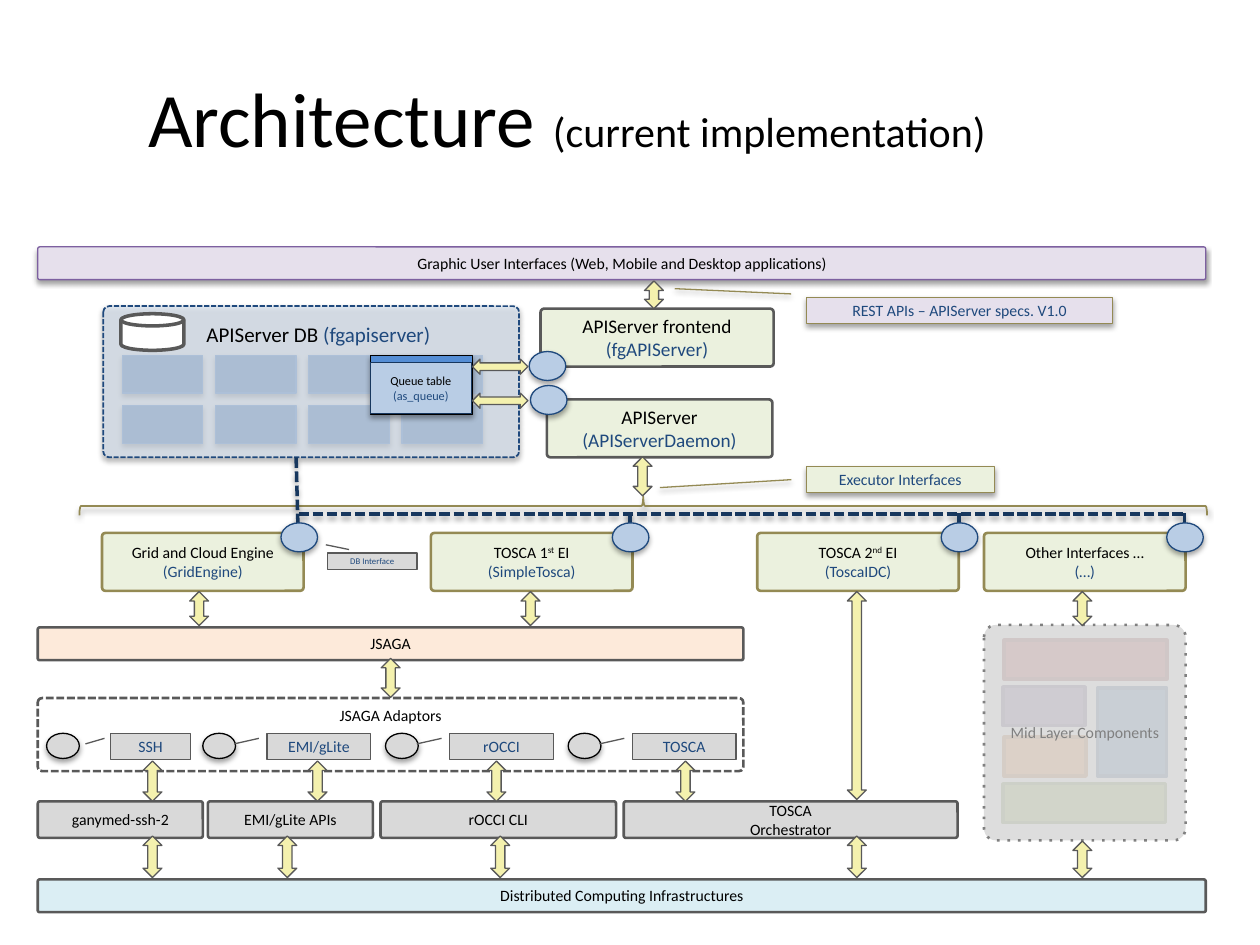
from lxml import etree
from pptx import Presentation
from pptx import util as u
from pptx.dml.color import RGBColor
from pptx.enum import shapes, text
from pptx.oxml.ns import qn

KIND = shapes.MSO_SHAPE
NAVY, INK, GREY, OLIVE = "1F497D", "000000", "595959", "948A54"

# Theme: text, then fill, line, width and extras for every kind of part
THEME = {
    "font": "Calibri",
    "size": {"title": 44, "subtitle": 24, "database": 12, "server": 11, "body": 9, "queue": 7, "tiny": 5},
    "shadow": {"opacity": 36, "blur": 3.1, "distance": 1.7},
    "look": {
        "tile": dict(fill="4F81BD", line="558ED5", width=0.75, shadow=True),
        "database": dict(fill="DCE6F2", line=NAVY, width=1, dash="sysDash", alpha=70, shadow=True),
        "disk": dict(fill="FFFFFF", line=GREY, width=2),
        "adaptors": dict(fill="FFFFFF", line=GREY, width=1.5, dash="sysDash"),
        "engine": dict(fill="EBF1DE", line=OLIVE, width=1.5),
        "server": dict(fill="EBF1DE", line=GREY, width=1.5),
        "saga": dict(fill="FDEADA", line=GREY, width=1.5),
        "infra": dict(fill="DBEEF4", line=GREY, width=1.5),
        "gui": dict(fill="E6E0EC", line="7D60A0", width=0.75, shadow=True),
        "client": dict(fill="D9D9D9", line=GREY, width=1.5),
        "middle": dict(fill="D9D9D9", line="808080", width=1.5, dash="dot", alpha=89),
        "label": dict(fill="D9D9D9", line=GREY, width=0.75),
        "dot": dict(fill="D9D9D9", line=INK, width=0.75, shadow=True),
        "executor": dict(fill="EBF1DE", line=OLIVE, width=0.75, shadow=True),
        "rest": dict(fill="E6E0EC", line=OLIVE, width=0.75, shadow=True),
        "queue_head": dict(fill="558ED5", line=INK, width=0.75, shadow=True),
        "queue": dict(fill="B9CDE5", line="17375E", width=0.75),
        "port": dict(fill="B9CDE5", line=NAVY, width=0.75, shadow=True),
        "arrow": dict(fill="F4F1AE", line=GREY, width=0.75),
        "brace": dict(line=OLIVE, width=1, shadow=True),
        "bus": dict(line="17375E", width=2, dash="sysDash", shadow=True),
    },
}
SIZE = THEME["size"]

# Content: places are left, top, width, height in inches
TITLE = [("Architecture ", "title"), ("(current implementation)", "subtitle")]
MIDDLE_PARTS = [  # place, fill, line
    ((7.97, 5.08, 1.29, 0.31), "C0504D", "8E3B39"),
    ((8.71, 5.46, 0.55, 0.7), "4F81BD", "3A5F8C"),
    ((7.96, 5.45, 0.65, 0.31), "8064A2", "5F4A78"),
    ((7.97, 5.85, 0.65, 0.31), "F79646", "B76F34"),
    ((7.96, 6.22, 1.29, 0.31), "9BBB59", "738A42"),
]
BARS = [  # place, look, text
    ((0.3, 5.54, 5.6, 0.58), "adaptors", "JSAGA Adaptors"),
    ((0.3, 4.98, 5.6, 0.26), "saga", "JSAGA"),
    ((0.3, 6.98, 9.27, 0.26), "infra", "Distributed Computing Infrastructures"),
    ((0.3, 1.96, 9.27, 0.26), "gui", "Graphic User Interfaces (Web, Mobile and Desktop applications)"),
]
ENGINES = [  # left, name (^ around raised text), implementation
    (0.81, "Grid and Cloud Engine", "(GridEngine)"),
    (3.42, "TOSCA 1^st^ EI", "(SimpleTosca)"),
    (6.01, "TOSCA 2^nd^ EI", "(ToscaIDC)"),
    (7.81, "Other Interfaces …", "(…)"),
]
SERVERS = [
    ((4.34, 3.17, 1.79, 0.46), "APIServer", "(APIServerDaemon)"),
    ((4.29, 2.45, 1.85, 0.46), "APIServer frontend", "(fgAPIServer)"),
]
ADAPTORS = [(0.88, 0.63, "SSH"), (2.12, 0.82, "EMI/gLite"), (3.57, 0.82, "rOCCI"), (5.02, 0.82, "TOSCA")]
CLIENTS = [  # left, width, lines
    (0.3, 1.31, ["ganymed-ssh-2"]), (1.65, 1.31, ["EMI/gLite APIs"]),
    (3.02, 1.87, ["rOCCI CLI"]), (4.95, 2.65, ["TOSCA", "Orchestrator"]),
]
CALLOUTS = [  # place, look, text, size, leader line
    ((2.6, 4.39, 0.71, 0.13), "label", "DB Interface", "tiny", (-0.22, 0.24, -0.51, -0.02)),
    ((6.4, 3.7, 1.49, 0.21), "executor", "Executor Interfaces", "body", (0.51, -0.08, 0.81, -0.78)),
    ((6.4, 2.36, 2.43, 0.21), "rest", "REST APIs – APIServer specs. V1.0", "body", (-0.13, -0.05, -0.33, -0.43)),
]
ARROWS = [  # centre height, length, centres across
    (2.34, 0.22, [5.19]),
    (3.78, 0.31, [5.1]),
    (4.83, 0.27, [1.58, 4.21, 8.59]),
    (5.38, 0.31, [3.1]),
    (5.52, 1.65, [6.8]),
    (6.2, 0.32, [1.21, 2.52, 3.94, 5.44]),
    (6.8, 0.33, [1.21, 2.28, 3.97, 6.8]),
    (6.82, 0.29, [8.59]),
]
ENGINE_PORTS = [2.37, 5, 7.61, 9.4]
SERVER_PORTS = [(4.34, 2.9), (4.35, 3.17)]
PORT_Y, BUS_Y = 4.26, 4.08


def child(parent, tag, **attributes):
    return etree.SubElement(parent, qn(tag), {key: str(value) for key, value in attributes.items()})


def dress(item, look):
    """Give a shape or connector its fill, outline and shadow."""
    props = item._element.spPr
    if look.get("fill"):
        item.fill.solid()
        item.fill.fore_color.rgb = RGBColor.from_string(look["fill"])
        if "alpha" in look:
            child(props.find(qn("a:solidFill"))[0], "a:alpha", val=look["alpha"] * 1000)
    elif hasattr(item, "fill"):
        item.fill.background()
    item.line.color.rgb = RGBColor.from_string(look["line"])
    item.line.width = u.Pt(look["width"])
    if "dash" in look:
        child(props.find(qn("a:ln")), "a:prstDash", val=look["dash"])
    effects = child(props, "a:effectLst")
    if look.get("shadow"):
        cast = THEME["shadow"]
        outer = child(effects, "a:outerShdw", blurRad=u.Pt(cast["blur"]), dist=u.Pt(cast["distance"]),
                      dir=5400000, rotWithShape=0)
        child(child(outer, "a:srgbClr", val="000000"), "a:alpha", val=cast["opacity"] * 1000)


def add_span(para, words, size, color, raised=False):
    span = para.add_run()
    span.text = words
    formats = {"name": THEME["font"], "size": u.Pt(SIZE[size])}
    for name, value in formats.items():
        setattr(span.font, name, value)
    span.font.color.rgb = RGBColor.from_string(color)
    if raised:
        span._r.get_or_add_rPr().set("baseline", "30000")


def write(box, lines, size="body", colors=(INK, NAVY), anchor=text.MSO_ANCHOR.MIDDLE):
    frame = box.text_frame
    frame.word_wrap, frame.vertical_anchor = True, anchor
    for index, line in enumerate(lines):
        para = frame.add_paragraph() if index else frame.paragraphs[0]
        para.alignment = text.PP_ALIGN.CENTER
        for part, words in enumerate(line.split("^")):
            add_span(para, words, size, colors[index], raised=part % 2 == 1)


def add_part(page, place, look, kind=KIND.RECTANGLE, adjust=()):
    box = page.shapes.add_shape(kind, *map(u.Inches, place))
    for index, value in enumerate(adjust):
        box.adjustments[index] = value
    dress(box, THEME["look"][look] if isinstance(look, str) else look)
    return box


def add_round(page, place, look, corner=0.06):
    return add_part(page, place, look, KIND.ROUNDED_RECTANGLE, [corner])


def add_arrow(page, x, y, length, thick=0.15, turn=0):
    place = (x - length / 2, y - thick / 2, length, thick)
    add_part(page, place, "arrow", KIND.LEFT_RIGHT_ARROW).rotation = turn


def add_bus(page, *ends):
    line = page.shapes.add_connector(shapes.MSO_CONNECTOR.STRAIGHT, *map(u.Inches, ends))
    dress(line, THEME["look"]["bus"])


def main():
    deck = Presentation()
    deck.slide_width, deck.slide_height = u.Inches(10), u.Inches(7.5)
    page = deck.slides.add_slide(deck.slide_layouts[5])

    # Title
    title = page.shapes.title
    for name, value in {"left": 0, "top": 0.3, "width": 9, "height": 1.25}.items():
        setattr(title, name, u.Inches(value))
    title.text_frame.vertical_anchor = text.MSO_ANCHOR.MIDDLE
    para = title.text_frame.paragraphs[0]
    para.alignment = text.PP_ALIGN.CENTER
    for words, size in TITLE:
        add_span(para, words, size, INK)

    # Database tables and middle layer under their translucent panels
    for column in range(4):
        for row in range(2):
            add_part(page, (0.97 + 0.74 * column, 2.82 + 0.4 * row, 0.64, 0.3), "tile")
    for place, fill, line in MIDDLE_PARTS:
        add_part(page, place, dict(fill=fill, line=line, width=2))
    add_round(page, (0.82, 2.43, 3.3, 1.2), "database", 0.04)
    write(add_round(page, (7.81, 4.96, 1.6, 1.71), "middle"), ["Mid Layer Components"], colors=["808080"])
    add_part(page, (0.96, 2.49, 0.5, 0.29), "disk", KIND.FLOWCHART_MAGNETIC_DISK)
    name_box = page.shapes.add_textbox(*map(u.Inches, (1.54, 2.5, 2.49, 0.28)))
    name_box.text_frame.word_wrap = True
    for words, color in (("APIServer DB ", INK), ("(fgapiserver)", NAVY)):
        add_span(name_box.text_frame.paragraphs[0], words, "database", color)
    add_part(page, (2.94, 2.82, 0.81, 0.47), "queue_head")
    write(add_part(page, (2.94, 2.88, 0.8, 0.4), "queue"), ["Queue table", "(as_queue)"], "queue")

    # Layers, engines, servers and clients
    for place, look, words in BARS:
        write(add_round(page, place, look), [words], anchor=text.MSO_ANCHOR.TOP)
    for left, *lines in ENGINES:
        write(add_round(page, (left, 4.23, 1.6, 0.46), "engine"), lines)
    for place, *lines in SERVERS:
        write(add_round(page, place, "server"), lines, "server")
    for left, width, lines in CLIENTS:
        write(add_round(page, (left, 6.36, width, 0.29), "client"), lines, colors=(INK, INK))

    # Adaptors and callouts
    leader = (0.19, -0.08, 0.4, -0.32)
    callouts = list(CALLOUTS)
    for left, width, words in ADAPTORS:
        add_part(page, (left - 0.51, 5.82, 0.26, 0.2), "dot", KIND.OVAL)
        callouts.append(((left, 5.82, width, 0.21), "label", words, "body", leader))
    for place, look, words, size, line in callouts:
        write(add_part(page, place, look, KIND.LINE_CALLOUT_1, line), [words], size, [NAVY])

    # Brace, database bus and its ports
    add_part(page, (5.03, -0.46, 0.15, 8.95), "brace", KIND.LEFT_BRACE).rotation = 90
    add_bus(page, ENGINE_PORTS[0], BUS_Y, 9.41, BUS_Y)
    add_bus(page, 2.35, 3.63, ENGINE_PORTS[0], 4.36)
    for x in ENGINE_PORTS[1:]:
        add_bus(page, x, BUS_Y - 0.01, x, 4.22)
    for x, y in SERVER_PORTS + [(x, PORT_Y) for x in ENGINE_PORTS]:
        add_part(page, (x - 0.14, y - 0.11, 0.29, 0.23), "port", KIND.OVAL)

    # Arrows
    for y, length, centres in ARROWS:
        for x in centres:
            add_arrow(page, x, y, length, turn=270)
    for y in (2.91, 3.18):
        add_arrow(page, 3.97, y, 0.44, 0.12)

    deck.save("out.pptx")


if __name__ == "__main__":
    main()
